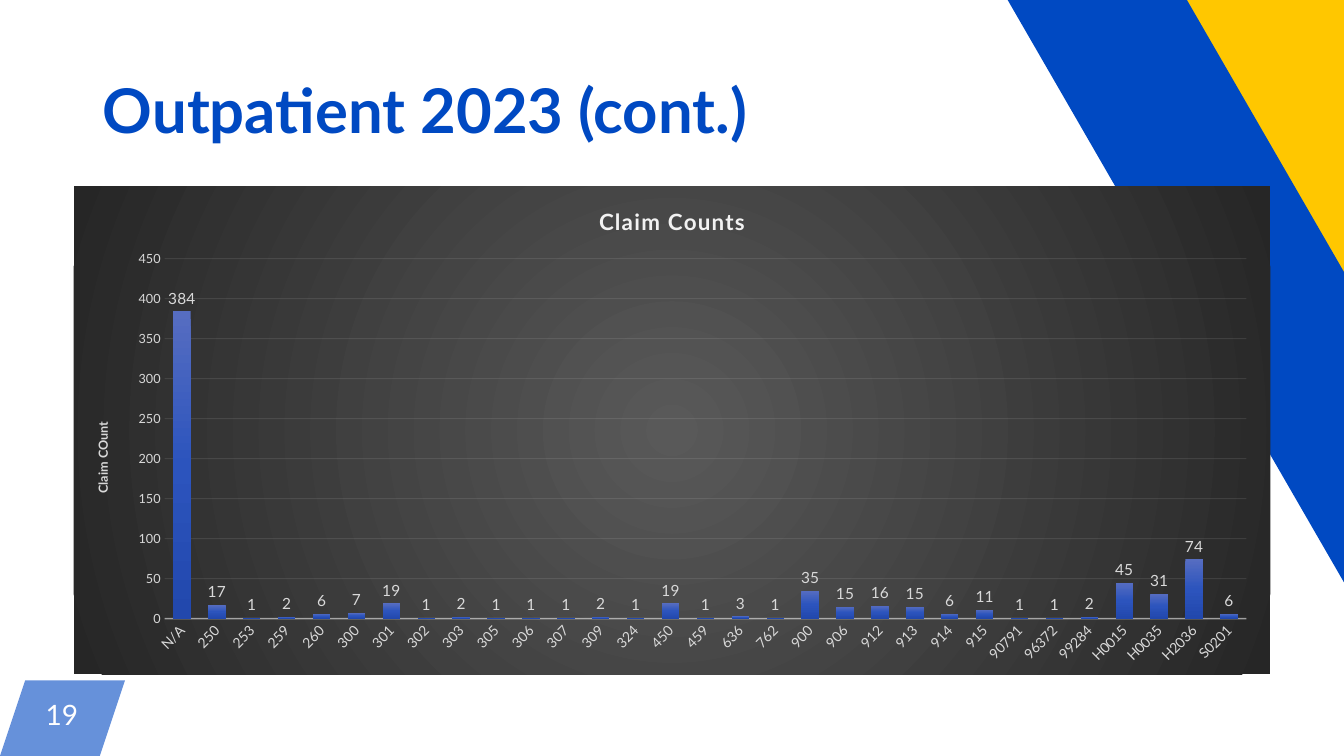
from lxml.etree import SubElement as Sub
from pptx import Presentation
from pptx.chart.data import CategoryChartData as Data
from pptx.dml.color import RGBColor as RGB
from pptx.enum.chart import XL_CHART_TYPE as Kind
from pptx.enum.chart import XL_LABEL_POSITION as Pos
from pptx.enum.chart import XL_TICK_MARK as Tick
from pptx.enum.shapes import MSO_SHAPE as Form
from pptx.enum.text import MSO_ANCHOR as Anchor
from pptx.enum.text import PP_ALIGN as Align
from pptx.oxml import parse_xml
from pptx.oxml.ns import nsdecls, qn
from pptx.util import Inches, Pt

HUE = {"blue": "0049C2", "gold": "FFC700", "white": "FFFFFF",
       "pale": "F2F2F2", "gray": "D9D9D9"}
FONT = "Lato"
W, H = 13.33, 7.5

counts = {
    "N/A": 384, "250": 17, "253": 1, "259": 2, "260": 6, "300": 7, "301": 19,
    "302": 1, "303": 2, "305": 1, "306": 1, "307": 1, "309": 2, "324": 1,
    "450": 19, "459": 1, "636": 3, "762": 1, "900": 35, "906": 15, "912": 16,
    "913": 15, "914": 6, "915": 11, "90791": 1, "96372": 1, "99284": 2,
    "H0015": 45, "H0035": 31, "H2036": 74, "S0201": 6}


def style(font, size, hue, bold=False):
    font.name, font.size, font.bold = FONT, Pt(size), bold
    font.color.rgb = RGB.from_string(HUE[hue])


def blend(stops, way):
    marks = "".join(f'<a:gs pos="{pos * 1000}"><a:srgbClr val="{hue}"/></a:gs>'
                    for pos, hue in stops)
    return parse_xml(f'<a:gradFill {nsdecls("a")} rotWithShape="1">'
                     f'<a:gsLst>{marks}</a:gsLst>{way}</a:gradFill>')


prs = Presentation()
prs.slide_width, prs.slide_height = Inches(W), Inches(H)
slide = prs.slides.add_slide(prs.slide_layouts[5])
shapes = slide.shapes

# Page tab and corner stripes
top = 0.9 * H
dots = [(Inches(x), Inches(y))
        for x, y in [(0.25, top), (1.24, top), (0.99, H), (0, H)]]
pen = shapes.build_freeform(*dots[0])
pen.add_line_segments(dots[1:])
tab = pen.convert_to_shape()
gold = shapes.add_shape(Form.RECTANGLE, Inches(12.78), Inches(-3.31),
                        Inches(1.97), Inches(9.81))
blue = shapes.add_shape(Form.RECTANGLE, Inches(11.82), Inches(-1.95),
                        Inches(1.54), Inches(9.81))
gold.rotation, blue.rotation = 330.2, 330
for band, hue in [(tab, "blue"), (gold, "gold"), (blue, "blue")]:
    band.shadow.inherit = False
    band.line.fill.background()
    band.fill.solid()
    band.fill.fore_color.rgb = RGB.from_string(HUE[hue])
tint = tab._element.spPr.find(".//" + qn("a:srgbClr"))
Sub(tint, qn("a:alpha"), val="60000")

# Page number
box = shapes.add_textbox(Inches(0.25), Inches(top), Inches(0.73), Inches(H - top))
frame = box.text_frame
frame.word_wrap = True
frame.vertical_anchor = Anchor.MIDDLE
frame.margin_left = frame.margin_right = Inches(0.04)
frame.margin_top = frame.margin_bottom = Inches(0.04)
frame.text = "19"
para = frame.paragraphs[0]
para.alignment, para.line_spacing = Align.CENTER, Pt(17.7)
style(para.runs[0].font, 20, "white")

# Title
title = shapes.title
title.left, title.top = Inches(0.92), Inches(0.4)
title.width, title.height = Inches(11.5), Inches(1.45)
title.text_frame.text = "Outpatient 2023 (cont.)"
title.text_frame.vertical_anchor = Anchor.MIDDLE
para = title.text_frame.paragraphs[0]
para.alignment, para.line_spacing = Align.LEFT, 0.9
style(para.runs[0].font, 44, "blue", True)

# Chart
data = Data()
data.categories = list(counts)
data.add_series("Series 1", list(counts.values()))
chart = shapes.add_chart(Kind.COLUMN_CLUSTERED, Inches(0.73), Inches(1.85),
                         Inches(11.87), Inches(4.84), data).chart
chart.has_legend = False
style(chart.font, 10, "gray")
cats, vals = chart.category_axis, chart.value_axis

# Chart and axis titles
for part, text, size, hue in [(chart, "Claim Counts", 16, "pale"),
                              (vals, "Claim COunt", 9, "gray")]:
    part.has_title = True
    head = chart.chart_title if part is chart else vals.axis_title
    head.text_frame.text = text
    run = head.text_frame.paragraphs[0].runs[0]
    style(run.font, size, hue, True)
    if part is chart:
        run.font._element.set("spc", "100")
        head.include_in_layout = False

# Chart backdrop and plot area
root = chart._chartSpace
back = parse_xml(f'<c:spPr {nsdecls("c", "a")}><a:ln><a:noFill/></a:ln></c:spPr>')
back.insert(0, blend([(0, "595959"), (100, "262626")],
                     '<a:path path="circle"><a:fillToRect l="50000" t="50000" '
                     'r="50000" b="50000"/></a:path>'))
root.find(qn("c:chart")).addnext(back)
area = root.find(".//" + qn("c:plotArea"))
for old in area.findall(qn("c:layout")):
    area.remove(old)
layout = parse_xml(f'<c:layout {nsdecls("c")}><c:manualLayout/></c:layout>')
for key, val in [("layoutTarget", "inner"), ("xMode", "edge"), ("yMode", "edge"),
                 ("x", 0.076), ("y", 0.148), ("w", 0.904), ("h", 0.738)]:
    Sub(layout[0], qn("c:" + key), val=str(val))
area.insert(0, layout)

# Axes
vals.minimum_scale, vals.maximum_scale, vals.major_unit = 0, 450, 50
vals.has_major_gridlines = True
for axis, size in [(cats, 10), (vals, 9)]:
    axis.major_tick_mark = axis.minor_tick_mark = Tick.NONE
    style(axis.tick_labels.font, size, "gray")
vals.format.line.fill.background()
turn = cats._element.find(qn("c:txPr")).find(qn("a:bodyPr"))
turn.set("rot", str(-45 * 60000))
turn.set("vert", "horz")
for line, width, alpha in [(cats.format.line, 1, 54),
                           (vals.major_gridlines.format.line, 0.75, 10)]:
    line.width = Pt(width)
    line.color.rgb = RGB.from_string(HUE["pale"])
    tint = line._get_or_add_ln().find(".//" + qn("a:srgbClr"))
    Sub(tint, qn("a:alpha"), val=str(alpha * 1000))

# Columns and their labels
plot = chart.plots[0]
plot.gap_width, plot.overlap, plot.vary_by_categories = 100, -24, False
bars = plot.series[0]
bars.invert_if_negative = False
bars._element.get_or_add_spPr().insert(
    0, blend([(0, "566DC1"), (50, "2C54BD"), (100, "2248AD")],
             '<a:lin ang="5400000" scaled="0"/>'))
labels = bars.data_labels
labels.show_value, labels.position = True, Pos.OUTSIDE_END
style(labels.font, 11, "gray")

prs.save("out.pptx")
